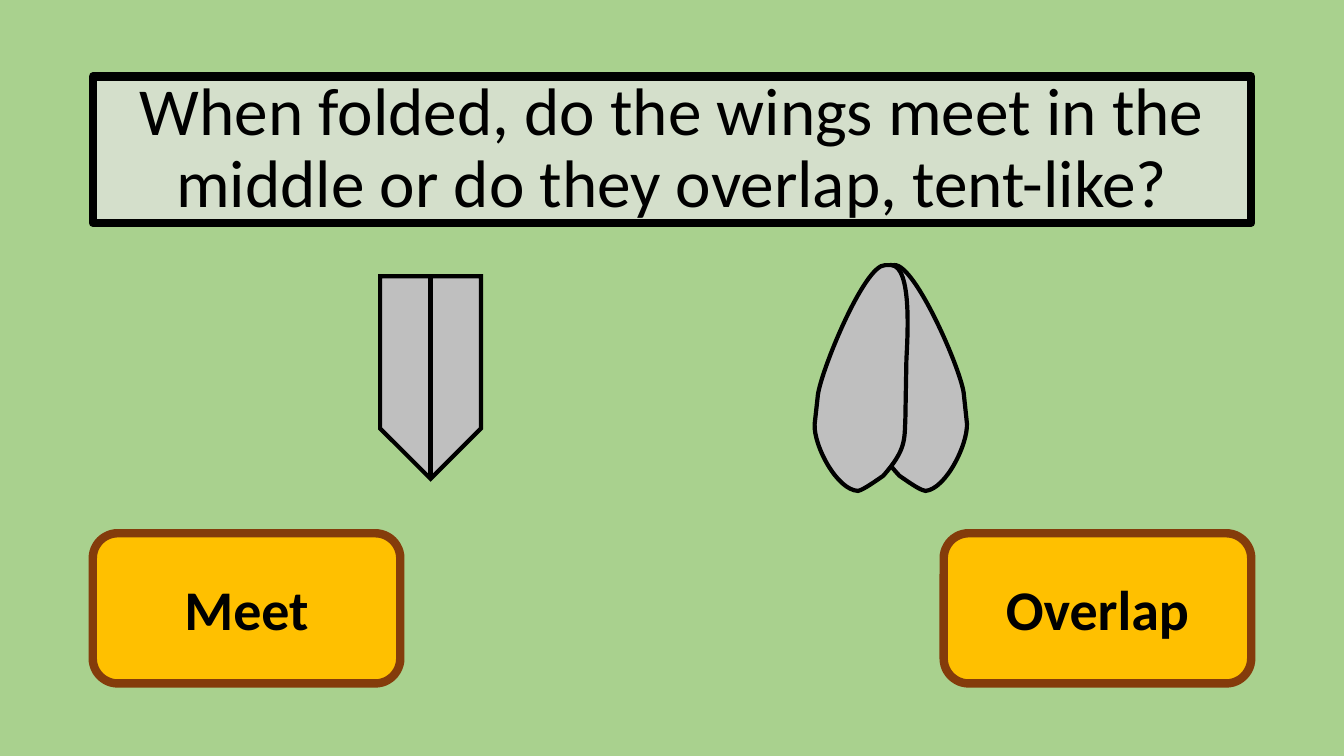
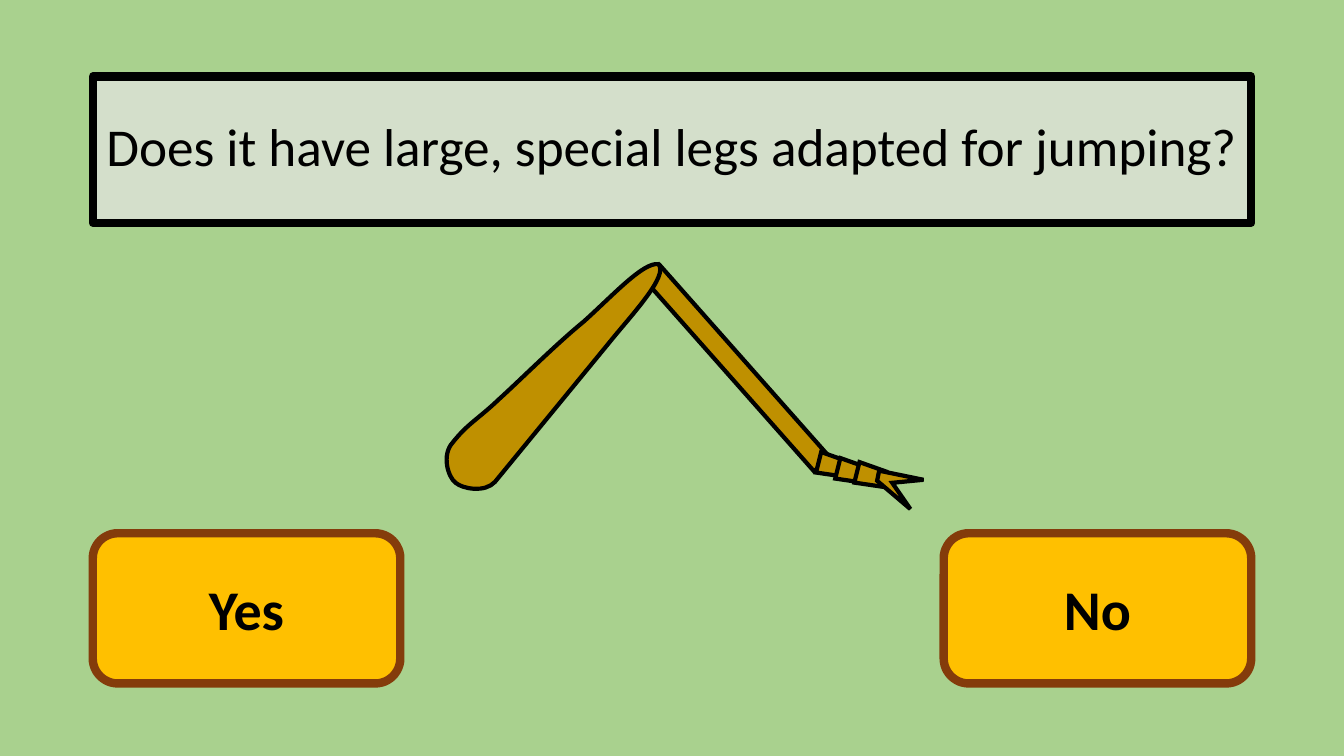
"""Two slides of an insect identification key: a question, a drawing and two answers."""
import math
import pptx
import pptx.dml.color
import pptx.enum.shapes
import pptx.enum.text
import pptx.oxml.ns
import pptx.util

PX = 9144
SLIDE_W, SLIDE_H = 1333, 750
MARGIN = 92
BUTTON_W, BUTTON_H, BUTTON_Y = 305, 149, 529
SHAPE = pptx.enum.shapes.MSO_SHAPE
THEME = {
    "background": "A9D18E",
    "ink": "000000",
    "panel": "E7E6E6",
    "panel_alpha": 70,
    "button": "FFC000",
    "button_edge": "843C0B",
    "wing": "BFBFBF",
    "leg": "BF9000",
    "frame_pt": 6,
    "outline_pt": 3,
    "font": "Calibri",
    "button_pt": 40,
}
RIGHT_WING = [
    (887, 263), (908, 262, 955, 371, 956, 392), (959, 420),
    (960, 441, 938, 485, 918, 487), (914, 486, 912, 486, 892, 472),
    (868, 446, 870, 437, 869, 416), (866, 358), (865, 337, 859, 265, 880, 264),
]
LEFT_WING = [
    (878, 263), (857, 262, 812, 373, 811, 394), (808, 421),
    (807, 442, 830, 486, 851, 487), (854, 486, 856, 486, 876, 472),
    (899, 446, 897, 436, 898, 415), (899, 357), (900, 336, 905, 264, 884, 263),
]
THIGH = [
    (452, 479), (444, 473, 438, 451, 449, 439), (464, 420, 474, 416, 495, 396),
    (517, 376, 552, 341, 579, 319), (609, 292, 638, 260, 653, 262),
    (664, 273, 626, 313, 605, 339), (491, 478), (481, 489, 459, 485, 452, 479),
]
CLAW = [(872, 467), (916, 476), (885, 479), (903, 505), (870, 477)]
FOOT_JOINTS = [(815, 448), (834, 454), (853, 458)]


def rgb(name):
    """Return the theme colour called name."""
    return pptx.dml.color.RGBColor.from_string(THEME[name])


def set_all(obj, values):
    """Set each attribute of obj from a dict."""
    for name, value in values.items():
        setattr(obj, name, value)


def append_tag(parent, tag, **attributes):
    """Append a drawing element to an XML parent and return it."""
    child = parent.makeelement(pptx.oxml.ns.qn(tag), attributes)
    parent.append(child)
    return child


def stroke(line, edge, width):
    """Set the colour and width of a line."""
    line.color.rgb = rgb(edge)
    line.width = pptx.util.Pt(THEME[width])


def paint(sp, fill, edge="ink", width="outline_pt", join="a:miter"):
    """Fill and outline a shape, without shadow."""
    sp.shadow.inherit = False
    sp.fill.solid()
    sp.fill.fore_color.rgb = rgb(fill)
    stroke(sp.line, edge, width)
    append_tag(sp.element.spPr.find(pptx.oxml.ns.qn("a:ln")), join)
    return sp


def add_preset(s, kind, box, fill, rotation=0, adjustments=(), **style):
    """Add a painted preset shape at box, given in px."""
    sp = s.shapes.add_shape(kind, *(v * PX for v in box))
    sp.rotation = rotation
    for i, value in enumerate(adjustments):
        sp.adjustments[i] = value
    return paint(sp, fill, **style)


def turn(x, y, degrees):
    """Turn a point clockwise about the origin."""
    a = math.radians(degrees)
    return (round(x * math.cos(a) - y * math.sin(a)),
            round(x * math.sin(a) + y * math.cos(a)))


def bend(sp, segments):
    """Merge the three straight steps of each six-value segment into a curve."""
    path = next(sp.element.spPr.iter(pptx.oxml.ns.qn("a:path")))
    steps = iter(path.findall(pptx.oxml.ns.qn("a:lnTo")))
    for segment in segments:
        first = next(steps)
        if len(segment) == 6:
            curve = path.makeelement(pptx.oxml.ns.qn("a:cubicBezTo"), {})
            first.addprevious(curve)
            for step in (first, next(steps), next(steps)):
                curve.append(step[0])
                path.remove(step)


def add_outline(s, segments, fill, rotation):
    """Add a closed, rotated freeform of a start, lines (2 values) and curves (6)."""
    start, *rest = [turn(x * PX, y * PX, -rotation)
                    for segment in segments
                    for x, y in zip(segment[0::2], segment[1::2])]
    builder = s.shapes.build_freeform(*start)
    builder.add_line_segments(rest, close=True)
    sp = builder.convert_to_shape()
    bend(sp, segments[1:])
    x, y = turn(sp.left + sp.width / 2, sp.top + sp.height / 2, rotation)
    set_all(sp, {"left": x - sp.width // 2, "top": y - sp.height // 2, "rotation": rotation})
    paint(sp, fill)


def add_line(s, x1, y1, x2, y2):
    """Add a straight line without shadow."""
    cx = s.shapes.add_connector(
        pptx.enum.shapes.MSO_CONNECTOR.STRAIGHT, *(v * PX for v in (x1, y1, x2, y2)))
    stroke(cx.line, "ink", "outline_pt")
    append_tag(cx.element.spPr, "a:effectLst")


def write(sp, text, size, bold=False, spacing=1.0):
    """Write centred text in a shape."""
    tf = sp.text_frame
    set_all(tf, {"word_wrap": True, "vertical_anchor": pptx.enum.text.MSO_ANCHOR.MIDDLE})
    p = tf.paragraphs[0]
    set_all(p, {"alignment": pptx.enum.text.PP_ALIGN.CENTER, "line_spacing": spacing})
    r = p.add_run()
    r.text = text
    set_all(r.font, {"name": THEME["font"], "size": pptx.util.Pt(size), "bold": bold})
    r.font.color.rgb = rgb("ink")


def add_question(s, text, size):
    """Add the framed, translucent question panel."""
    sp = add_preset(s, SHAPE.RECTANGLE, (MARGIN, 76, SLIDE_W - 2 * MARGIN, 145), "panel",
                    width="frame_pt", join="a:round")
    color = sp.element.spPr.find(pptx.oxml.ns.qn("a:solidFill"))[0]
    append_tag(color, "a:alpha", val=str(THEME["panel_alpha"] * 1000))
    write(sp, text, size, spacing=0.9)


def add_answers(s, labels):
    """Add one answer button at each side."""
    for x, label in zip((MARGIN, SLIDE_W - MARGIN - BUTTON_W), labels):
        sp = add_preset(s, SHAPE.ROUNDED_RECTANGLE, (x, BUTTON_Y, BUTTON_W, BUTTON_H),
                        "button", edge="button_edge", width="frame_pt")
        write(sp, label, THEME["button_pt"], bold=True)


def draw_wings(s):
    """Draw wings that overlap and wings that meet."""
    add_outline(s, RIGHT_WING, "wing", 86.5)
    add_outline(s, LEFT_WING, "wing", 272.4)
    add_preset(s, SHAPE.SNIP_2_SAME_RECTANGLE, (377, 274, 100, 201), "wing",
               rotation=180, adjustments=(0.5, 0))
    add_line(s, 427, 274, 427, 475)


def draw_leg(s):
    """Draw a jumping leg with its foot."""
    add_preset(s, SHAPE.RECTANGLE, (604, 355, 254, 21), "leg", rotation=48.5)
    add_outline(s, THIGH, "leg", 312.9)
    for x, y in FOOT_JOINTS:
        add_preset(s, SHAPE.TRAPEZOID, (x, y, 21, 28), "leg",
                   rotation=104, adjustments=(0.13,))
    add_outline(s, CLAW, "leg", 21.9)


def add_key_slide(prs, question, size, answers, draw):
    """Add one slide of the key."""
    s = prs.slides.add_slide(prs.slide_layouts[6])
    add_question(s, question, size)
    add_answers(s, answers)
    draw(s)


def main():
    """Build and save the deck."""
    prs = pptx.Presentation()
    set_all(prs, {"slide_width": SLIDE_W * PX, "slide_height": SLIDE_H * PX})
    fill = prs.slide_master.background.fill
    fill.solid()
    fill.fore_color.rgb = rgb("background")
    add_key_slide(prs, "When folded, do the wings meet in the middle or do they overlap, tent-like?",
                  48, ("Meet", "Overlap"), draw_wings)
    add_key_slide(prs, "Does it have large, special legs adapted for jumping?",
                  38, ("Yes", "No"), draw_leg)
    prs.save("out.pptx")


if __name__ == "__main__":
    main()
